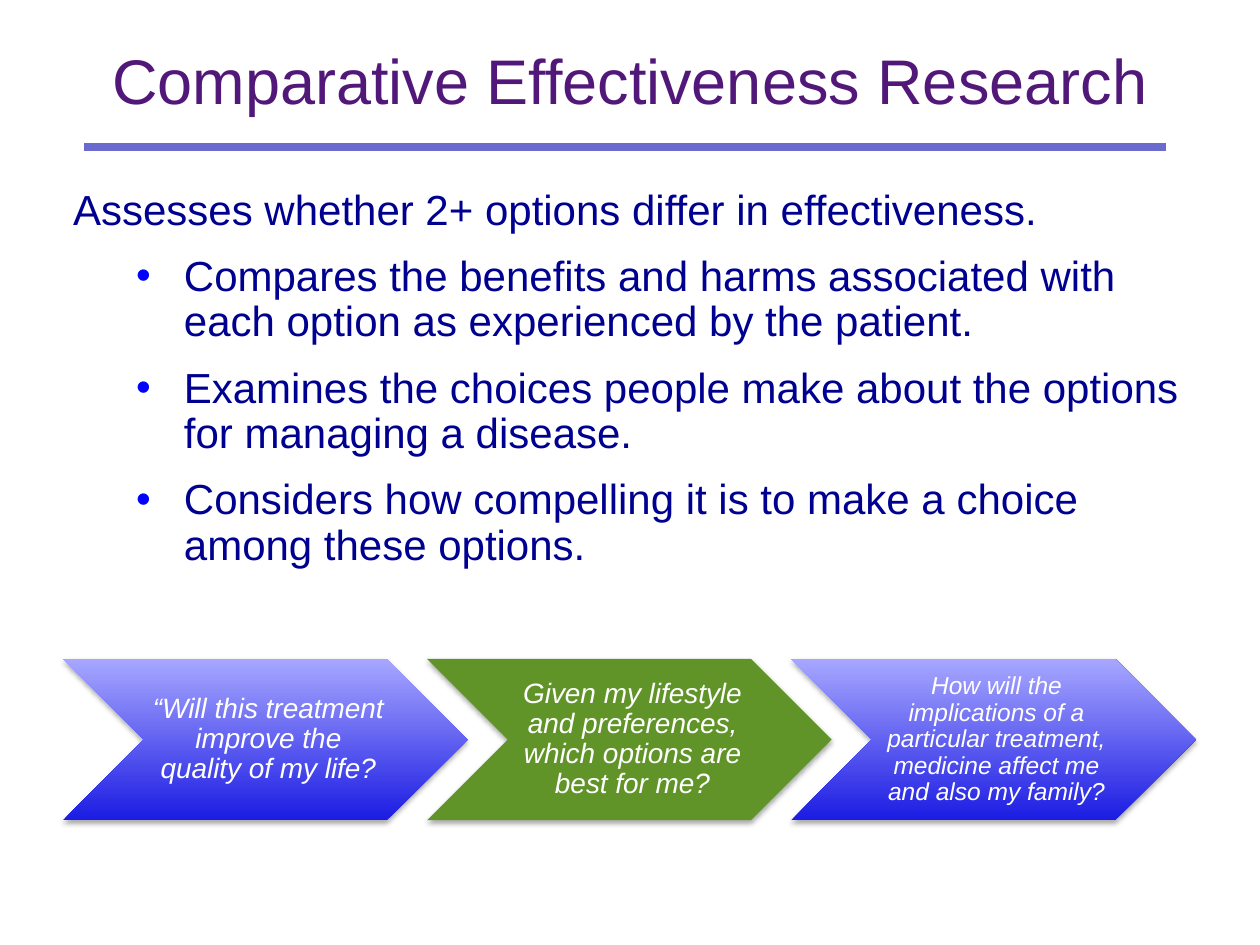
from lxml.etree import SubElement
from pptx import Presentation
from pptx.dml.color import RGBColor
from pptx.enum.shapes import MSO_CONNECTOR as Connector, MSO_SHAPE as Shape
from pptx.enum.text import MSO_ANCHOR as Anchor, MSO_AUTO_SIZE as AutoSize, PP_ALIGN as Align
from pptx.oxml.ns import qn
from pptx.util import Inches, Pt

COLORS = {
    "title": "511879", "rule": "6B6BCF", "body": "000090", "bullet": "0000FF",
    "deep": "1C1CE3", "pale": "A7A7FF", "green": "619428",
    "white": "FFFFFF", "shadow": "000000",
}
WIDTH, HEIGHT = 10, 7.5
POINTS = [
    "Compares the benefits and harms associated with each option as experienced by the patient.",
    "Examines the choices people make about the options for managing a disease.",
    "Considers how compelling it is to make a choice among these options.",
]
# Text, size and whether the chevron is the highlighted one
QUESTIONS = [
    ("“Will this treatment improve the quality of my life?", 16, False),
    ("Given my lifestyle and preferences, which options are best for me?", 16, True),
    ("How will the implications of a particular treatment, medicine affect me "
     "and also my family?", 14, False),
]


def color(name):
    return RGBColor.from_string(COLORS[name])


def inches(box):
    return [Inches(value) for value in box]


def prepare_frame(frame, margins, anchor=Anchor.TOP):
    frame.word_wrap = True
    frame.auto_size = AutoSize.NONE
    frame.vertical_anchor = anchor
    (frame.margin_left, frame.margin_top,
     frame.margin_right, frame.margin_bottom) = inches(margins)


def write(paragraph, text, *, size, ink, align=Align.LEFT, spacing=0.9,
          before=0, italic=False, bullet=False):
    paragraph.alignment = align
    paragraph.line_spacing = spacing
    paragraph.space_before = Pt(before)
    if bullet:
        properties = paragraph._p.get_or_add_pPr()
        properties.set("marL", str(Inches(0.88)))
        properties.set("indent", str(Inches(-0.38)))
        bullet_color = SubElement(properties, qn("a:buClr"))
        SubElement(bullet_color, qn("a:srgbClr"), val=COLORS["bullet"])
        SubElement(properties, qn("a:buFont"), typeface="Arial")
        SubElement(properties, qn("a:buChar"), char="•")
    run = paragraph.add_run()
    run.text = text
    run.font.name = "Arial"
    run.font.size = Pt(size)
    run.font.italic = italic
    run.font.color.rgb = color(ink)


def add_soft_shadow(shape):
    shape.shadow.inherit = False
    effects = shape._element.spPr.find(qn("a:effectLst"))
    shadow = SubElement(effects, qn("a:outerShdw"), blurRad=str(Pt(3.1)),
                        dist=str(Pt(1.8)), dir="5400000", rotWithShape="0")
    tint = SubElement(shadow, qn("a:srgbClr"), val=COLORS["shadow"])
    SubElement(tint, qn("a:alpha"), val="35000")


def build_title(slide, box):
    title = slide.shapes.title
    title.left, title.top, title.width, title.height = inches(box)
    prepare_frame(title.text_frame, (0.1, 0.09, 0.1, 0.05))
    write(title.text_frame.paragraphs[0], "Comparative Effectiveness Research",
          size=36, ink="title", align=Align.CENTER, spacing=0.85)


def build_rule(slide, left, right, y):
    rule = slide.shapes.add_connector(Connector.STRAIGHT, *inches((left, y, right, y)))
    rule.line.color.rgb = color("rule")
    rule.line.width = Pt(4.5)
    SubElement(rule._element.spPr, qn("a:effectLst"))


def build_body(slide, box):
    frame = slide.shapes.add_textbox(*inches(box)).text_frame
    prepare_frame(frame, (0, 0, 0, 0))
    write(frame.paragraphs[0], "Assesses whether 2+ options differ in effectiveness.",
          size=24, ink="body")
    for point in POINTS:
        write(frame.add_paragraph(), point, size=24, ink="body", before=12, bullet=True)


def build_chevron(group, box, text, size, highlighted):
    left, top, width, height = box
    chevron = group.shapes.add_shape(Shape.CHEVRON, *inches(box))
    if highlighted:
        chevron.fill.solid()
        chevron.fill.fore_color.rgb = color("green")
    else:
        chevron.fill.gradient()
        chevron.fill.gradient_angle = 90
        for stop, name in zip(chevron.fill.gradient_stops, ("deep", "pale")):
            stop.color.rgb = color(name)
    chevron.line.fill.background()
    add_soft_shadow(chevron)

    # The label keeps to the middle of the chevron, clear of notch and point
    label_box = (left + width * 0.2, top, width * 0.6, height)
    frame = group.shapes.add_textbox(*inches(label_box)).text_frame
    prepare_frame(frame, (0.07, 0.02, 0.02, 0.02), Anchor.MIDDLE)
    write(frame.paragraphs[0], text, size=size, ink="white",
          align=Align.CENTER, italic=True)


def build_questions(slide, box):
    left, top, width, height = box
    # Neighbours overlap by a tenth of a chevron's width
    chevron_width = width / (1 + 0.9 * (len(QUESTIONS) - 1))
    group = slide.shapes.add_group_shape()
    for index, question in enumerate(QUESTIONS):
        x = left + index * 0.9 * chevron_width
        build_chevron(group, (x, top, chevron_width, height), *question)


def main():
    presentation = Presentation()
    presentation.slide_width, presentation.slide_height = inches((WIDTH, HEIGHT))
    slide = presentation.slides.add_slide(presentation.slide_layouts[5])
    slide.background.fill.solid()
    slide.background.fill.fore_color.rgb = color("white")

    margin = WIDTH * 0.05
    content_width = WIDTH - 2 * margin
    build_title(slide, (margin, HEIGHT * 0.044, content_width, HEIGHT / 6))
    build_questions(slide, (margin, 5.23, content_width - 0.01, 1.28))
    build_rule(slide, 0.67, 9.25, 1.17)
    build_body(slide, (0.58, HEIGHT * 0.2, 8.92, 2.28))
    presentation.save("out.pptx")


if __name__ == "__main__":
    main()
